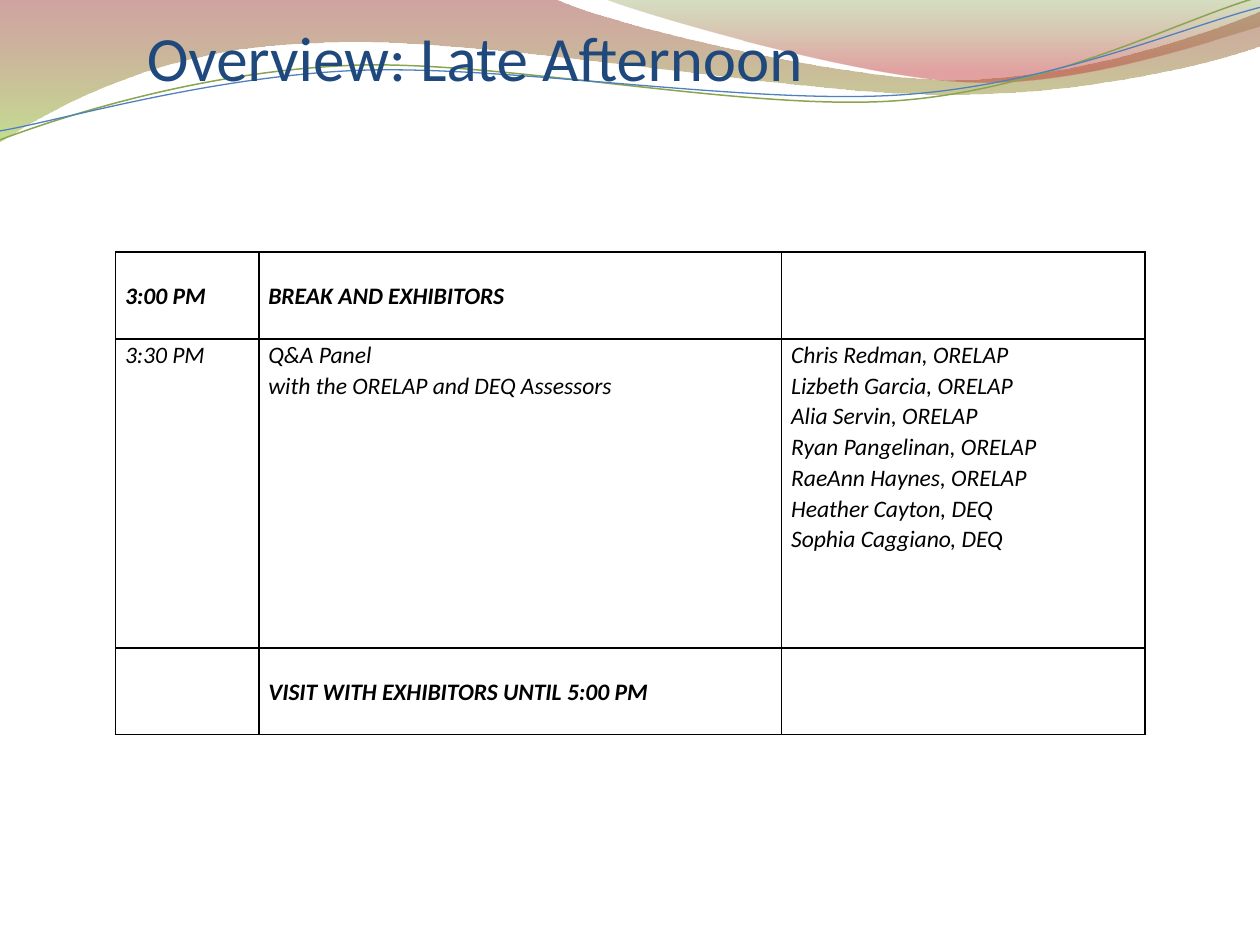
from dataclasses import dataclass

from lxml.etree import SubElement
from pptx import Presentation
from pptx.dml.color import RGBColor
from pptx.enum.text import MSO_ANCHOR as Anchor, MSO_AUTO_SIZE as AutoSize, PP_ALIGN as Align
from pptx.oxml import parse_xml
from pptx.oxml.ns import nsdecls, qn
from pptx.util import Cm, Pt

FONT = "Calibri"


@dataclass
class Wave:
    """Each segment is one end point (line) or two controls and an end point (curve), in cm."""
    start: tuple
    segments: list
    stops: tuple = ()  # (position, colour, opacity in percent)
    line: str = ""
    width: float = 0


@dataclass
class Entry:
    cells: tuple
    height: float
    anchor: Anchor = Anchor.MIDDLE
    bold: bool = True


WAVES = [
    Wave((0, 0), [
        (11.18, -0.03),
        (12.09, 0.43, 16.87, 1.6, 19.25, 1.6),
        (21.67, 1.6, 24.33, 0.66, 25.4, 0.23),
        (25.43, 0.91),
        (24.97, 1.12, 22.1, 1.93, 18.95, 1.9),
        (15.8, 1.9, 9.7, 0.71, 6.53, 0.86),
        (3.28, 0.91, 1.17, 2.11, -0.03, 2.87),
    ], stops=((0, "973330", 45), (1, "95C238", 55))),
    Wave((12.17, -0.03), [
        (12.93, 0.28, 17.32, 1.57, 19.53, 1.65),
        (21.74, 1.75, 24.41, 0.81, 25.4, 0.53),
        (25.4, 0),
    ], stops=((0, "769537", 30), (0.8, "BE3330", 45))),
    Wave((0, 2.82), [
        (1.22, 2.36, 4.01, 1.45, 7.04, 1.32),
        (10.03, 1.19, 15.06, 2.26, 18.11, 2.03),
        (21.16, 1.8, 23.83, 0.38, 25.35, -0.05),
    ], line="89A54F", width=0.85),
    Wave((0, 2.64), [
        (1.19, 2.44, 4.17, 1.55, 7.19, 1.42),
        (10.24, 1.3, 15.16, 2.13, 18.21, 1.91),
        (21.23, 1.7, 23.9, 0.53, 25.4, 0.15),
    ], line="4F81BD", width=0.75),
]

COLUMN_WIDTHS = (2.89, 10.54, 7.32)
SCHEDULE = [
    Entry(("3:00 PM", "BREAK AND EXHIBITORS", ""), 1.75),
    Entry((
        "3:30 PM",
        "Q&A Panel\nwith the ORELAP and DEQ Assessors",
        "Chris Redman, ORELAP\nLizbeth Garcia, ORELAP\nAlia Servin, ORELAP\n"
        "Ryan Pangelinan, ORELAP\nRaeAnn Haynes, ORELAP\n"
        "Heather Cayton, DEQ\nSophia Caggiano, DEQ",
    ), 6.23, Anchor.TOP, False),
    Entry(("", "VISIT WITH EXHIBITORS UNTIL 5:00 PM", ""), 1.75),
]


def color(value: str) -> RGBColor:
    return RGBColor.from_string(value)


def set_all(target, values: dict) -> None:
    for name, value in values.items():
        setattr(target, name, value)


def bend_segments(shape, segments: list) -> None:
    """Join the three straight steps of each curved segment into one cubic curve."""
    steps = iter(list(shape._element.spPr.iter(qn("a:lnTo"))))
    for segment in segments:
        first = next(steps)
        if len(segment) == 2:
            continue
        first.tag = qn("a:cubicBezTo")
        for _ in range(2):
            step = next(steps)
            first.append(step[0])
            step.getparent().remove(step)


def draw_wave(page, wave: Wave) -> None:
    points = [(Cm(x), Cm(y)) for segment in wave.segments
              for x, y in zip(segment[::2], segment[1::2])]
    builder = page.shapes.build_freeform(*map(Cm, wave.start))
    builder.add_line_segments(points, close=bool(wave.stops))
    shape = builder.convert_to_shape()
    # The closing step back to the start is kept straight.
    bend_segments(shape, wave.segments)
    shape.shadow.inherit = False
    if not wave.stops:
        shape.fill.background()
        shape.line.color.rgb = color(wave.line)
        shape.line.width = Pt(wave.width)
        return
    shape.line.fill.background()
    shape.fill.gradient()
    shape.fill.gradient_angle = 270
    for stop, (position, value, _) in zip(shape.fill.gradient_stops, wave.stops):
        stop.position = position
        stop.color.rgb = color(value)
    tints = shape._element.spPr.iter(qn("a:srgbClr"))
    for tint, (_, _, opacity) in zip(tints, wave.stops):
        SubElement(tint, qn("a:alpha"), val=str(opacity * 1000))


def add_title(page, text: str) -> None:
    title = page.shapes.title
    page.shapes._spTree.append(title._element)  # in front of the waves
    set_all(title, dict(left=Cm(2.96), top=Cm(0), width=Cm(21.16), height=Cm(1.9)))
    frame = title.text_frame
    set_all(frame, dict(text=text, vertical_anchor=Anchor.BOTTOM, auto_size=AutoSize.NONE,
                        word_wrap=True, margin_left=0, margin_right=0,
                        margin_top=Cm(0.13), margin_bottom=0))
    para = frame.paragraphs[0]
    para.alignment = Align.LEFT
    span = para.runs[0]
    set_all(span.font, dict(name=FONT, size=Pt(36)))
    span.font.color.rgb = color("1F497D")


def add_borders(cell) -> None:
    properties = cell._tc.get_or_add_tcPr()
    for index, side in enumerate(("lnL", "lnR", "lnT", "lnB")):
        properties.insert(index, parse_xml(
            f'<a:{side} {nsdecls("a")} w="{Pt(1)}"><a:solidFill>'
            f'<a:srgbClr val="000000"/></a:solidFill></a:{side}>'))


def fill_cell(cell, text: str, entry: Entry) -> None:
    set_all(cell, dict(vertical_anchor=entry.anchor, margin_left=Cm(0.19),
                       margin_right=Cm(0.19), margin_top=0, margin_bottom=0))
    cell.fill.background()
    add_borders(cell)
    if not text:
        return
    cell.text = text
    for para in cell.text_frame.paragraphs:
        para.line_spacing = 1.07
        for span in para.runs:
            set_all(span.font, dict(name=FONT, size=Pt(13.5), bold=entry.bold, italic=True))
            span.font.color.rgb = color("000000")


def add_schedule(page) -> None:
    height = sum(entry.height for entry in SCHEDULE)
    table = page.shapes.add_table(len(SCHEDULE), len(COLUMN_WIDTHS), Cm(2.33), Cm(5.08),
                                  Cm(sum(COLUMN_WIDTHS)), Cm(height)).table
    set_all(table, dict(first_row=False, horz_banding=False))
    for column, width in zip(table.columns, COLUMN_WIDTHS):
        column.width = Cm(width)
    for row, entry in zip(table.rows, SCHEDULE):
        row.height = Cm(entry.height)
        for cell, text in zip(row.cells, entry.cells):
            fill_cell(cell, text, entry)


def main() -> None:
    deck = Presentation()
    set_all(deck, dict(slide_width=Cm(25.4), slide_height=Cm(19.05)))
    page = deck.slides.add_slide(deck.slide_layouts.get_by_name("Title Only"))
    for wave in WAVES:
        draw_wave(page, wave)
    add_title(page, "Overview: Late Afternoon")
    add_schedule(page)
    deck.save("out.pptx")


if __name__ == "__main__":
    main()
